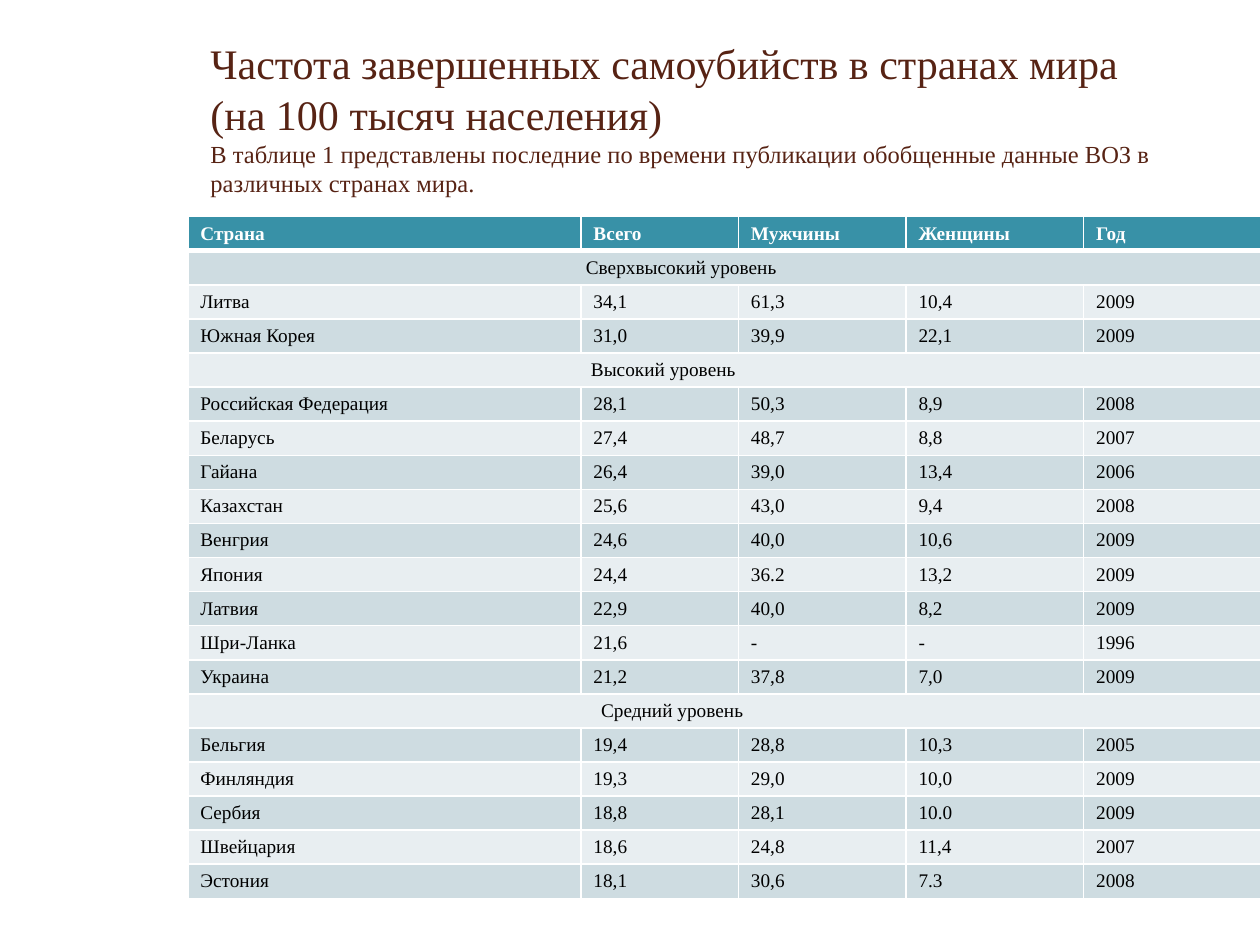
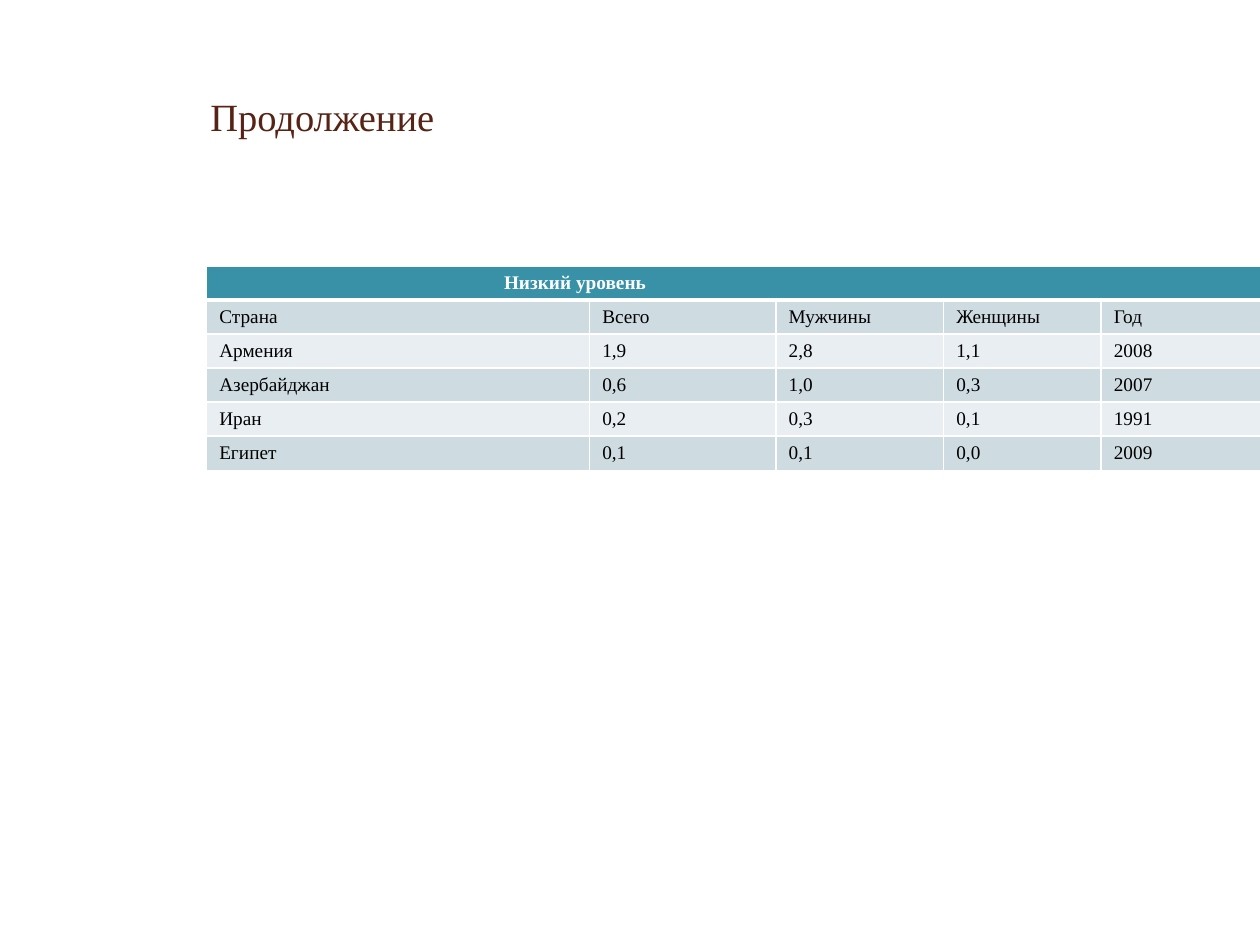
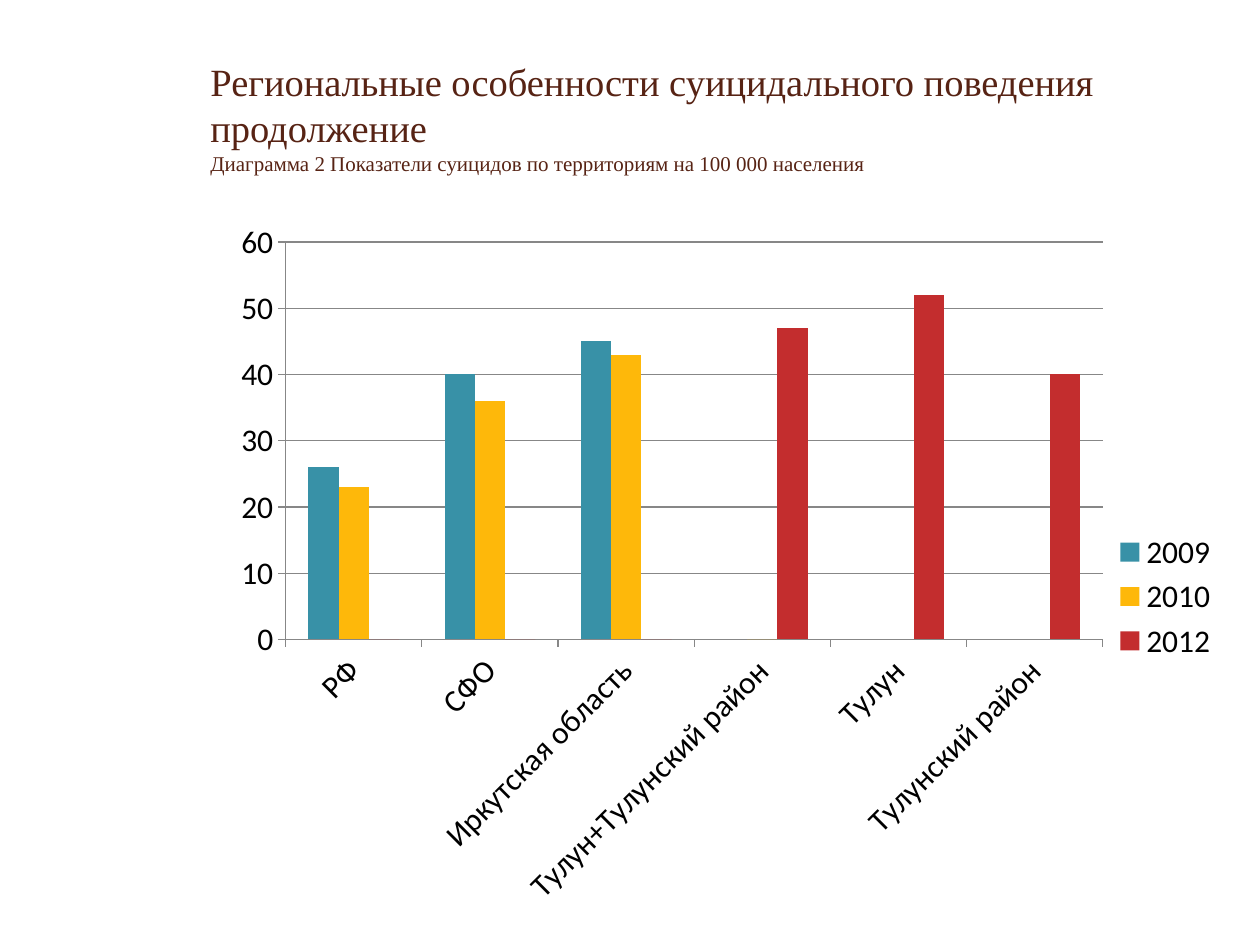
from dataclasses import dataclass

from lxml import etree
from pptx import Presentation
from pptx.chart.data import CategoryChartData
from pptx.dml.color import RGBColor
from pptx.enum.chart import XL_CHART_TYPE, XL_LEGEND_POSITION, XL_TICK_MARK
from pptx.enum.text import MSO_ANCHOR, MSO_AUTO_SIZE, PP_ALIGN
from pptx.oxml.ns import qn
from pptx.util import Emu, Inches, Pt

COLUMNS = XL_CHART_TYPE.COLUMN_CLUSTERED
LEGEND_RIGHT = XL_LEGEND_POSITION.RIGHT
TICK_OUTSIDE = XL_TICK_MARK.OUTSIDE
MIDDLE = MSO_ANCHOR.MIDDLE
NO_AUTOFIT = MSO_AUTO_SIZE.NONE
LEFT = PP_ALIGN.LEFT

# Shared look
SLIDE_WIDTH, SLIDE_HEIGHT = Inches(10), Inches(7.5)
GRID_COLUMNS = 100  # square grid cells across the slide
TITLE_ONLY = 5
TEXT_FONT, CHART_FONT = "Times New Roman", "Calibri"
TITLE_COLOUR, WHITE, BLACK, AXIS_GREY = "572314", "FFFFFF", "000000", "878787"
HEADER_FILL, DARK_BAND, LIGHT_BAND = "3891A7", "CEDCE1", "E8EEF1"
CELL_SIZE, ROW_HEIGHT = 11, 2.7


@dataclass(frozen=True)
class Area:
    """A place on the slide, in grid cells."""
    left: float
    top: float
    width: float
    height: float

    def lengths(self) -> tuple[Emu, Emu, Emu, Emu]:
        return (grid(self.left), grid(self.top),
                grid(self.width), grid(self.height))


@dataclass(frozen=True)
class TitleLine:
    text: str
    size: int


@dataclass(frozen=True)
class Section:
    """A heading that spans a whole table row, indented in grid cells."""
    text: str
    indent: float


@dataclass(frozen=True)
class Series:
    name: str
    values: tuple[int | None, ...]
    colour: str


Row = Section | tuple[str, ...]

TITLE_AREA = Area(15.7, 3, 82, 12.5)
TALL_TITLE_AREA = Area(15.7, 2.3, 82, 14.1)
CHART_AREA = Area(15.7, 15.8, 82, 63.1)
PLOT_SHARES = {"x": 0.085, "y": 0.054, "w": 0.791, "h": 0.5}

# Content
HEADINGS = ("Страна", "Всего", "Мужчины", "Женщины", "Год")
HIGH_RATES: list[Row] = [
    HEADINGS,
    Section("Сверхвысокий уровень", 31.6),
    ("Литва", "34,1", "61,3", "10,4", "2009"),
    ("Южная Корея", "31,0", "39,9", "22,1", "2009"),
    Section("Высокий уровень", 32),
    ("Российская Федерация", "28,1", "50,3", "8,9", "2008"),
    ("Беларусь", "27,4", "48,7", "8,8", "2007"),
    ("Гайана", "26,4", "39,0", "13,4", "2006"),
    ("Казахстан", "25,6", "43,0", "9,4", "2008"),
    ("Венгрия", "24,6", "40,0", "10,6", "2009"),
    ("Япония", "24,4", "36.2", "13,2", "2009"),
    ("Латвия", "22,9", "40,0", "8,2", "2009"),
    ("Шри-Ланка", "21,6", "-", "-", "1996"),
    ("Украина", "21,2", "37,8", "7,0", "2009"),
    Section("Средний уровень", 32.8),
    ("Бельгия", "19,4", "28,8", "10,3", "2005"),
    ("Финляндия", "19,3", "29,0", "10,0", "2009"),
    ("Сербия", "18,8", "28,1", "10.0", "2009"),
    ("Швейцария", "18,6", "24,8", "11,4", "2007"),
    ("Эстония", "18,1", "30,6", "7.3", "2008"),
]
LOW_RATES: list[Row] = [
    Section("Низкий уровень", 23.6),
    HEADINGS,
    ("Армения", "1,9", "2,8", "1,1", "2008"),
    ("Азербайджан", "0,6", "1,0", "0,3", "2007"),
    ("Иран", "0,2", "0,3", "0,1", "1991"),
    ("Египет", "0,1", "0,1", "0,0", "2009"),
]
TERRITORIES = ("РФ", "СФО", "Иркутская область", "Тулун+Тулунский район",
               "Тулун", "Тулунский район")
YEARS = (
    Series("2009", (26, 40, 45, None, None, None), "3891A7"),
    Series("2010", (23, 36, 43, 0, None, None), "FEB80A"),
    Series("2012", (0, 0, 0, 47, 52, 40), "C32D2E"),
)


def grid(cells: float) -> Emu:
    return Emu(round(SLIDE_WIDTH * cells / GRID_COLUMNS))


def colour(value: str) -> RGBColor:
    return RGBColor.from_string(value)


def set_font(font, name: str, size: int, ink: str, bold: bool = False) -> None:
    font.name, font.size, font.bold = name, Pt(size), bold
    font.color.rgb = colour(ink)


def add_page(deck, area: Area, lines: list[TitleLine]):
    """Add a slide whose title has one line break between its lines."""
    page = deck.slides.add_slide(deck.slide_layouts[TITLE_ONLY])
    box = page.shapes.title
    box.left, box.top, box.width, box.height = area.lengths()
    frame = box.text_frame
    frame.word_wrap, frame.auto_size = True, NO_AUTOFIT
    frame.vertical_anchor = MIDDLE
    para = frame.paragraphs[0]
    para.alignment = LEFT
    for index, line in enumerate(lines):
        if index:
            para.add_line_break()
        span = para.add_run()
        span.text = line.text
        set_font(span.font, TEXT_FONT, line.size, TITLE_COLOUR)
    return page


# Tables
def add_borders(cell, bottom: int) -> None:
    properties = cell._tc.get_or_add_tcPr()
    widths = {"a:lnL": 1, "a:lnR": 1, "a:lnT": 1, "a:lnB": bottom}
    for position, (tag, width) in enumerate(widths.items()):
        line = etree.Element(qn(tag), w=str(Pt(width)))
        fill = etree.SubElement(line, qn("a:solidFill"))
        etree.SubElement(fill, qn("a:srgbClr"), val=WHITE)
        properties.insert(position, line)


def fill_cell(cell, text: str, row: int) -> None:
    header = row == 0
    band = DARK_BAND if row % 2 else LIGHT_BAND
    cell.fill.solid()
    cell.fill.fore_color.rgb = colour(HEADER_FILL if header else band)
    add_borders(cell, 3 if header else 1)
    para = cell.text_frame.paragraphs[0]
    para.text = text
    set_font(para.font, TEXT_FONT, CELL_SIZE, WHITE if header else BLACK, header)


def add_rates(page, left: float, top: float, widths: tuple[float, ...],
              rows: list[Row]) -> None:
    area = Area(left, top, sum(widths), ROW_HEIGHT * len(rows))
    table = page.shapes.add_table(len(rows), len(widths), *area.lengths()).table
    for column, width in zip(table.columns, widths):
        column.width = grid(width)
    for index, row in enumerate(rows):
        table.rows[index].height = grid(ROW_HEIGHT)
        section = isinstance(row, Section)
        texts = (row.text,) + ("",) * (len(widths) - 1) if section else row
        for column, text in enumerate(texts):
            fill_cell(table.cell(index, column), text, index)
        if section:
            first = table.cell(index, 0)
            first.merge(table.cell(index, len(widths) - 1))
            first.margin_left = grid(row.indent)


# Chart
def place_plot(chart) -> None:
    area = chart._chartSpace.chart.plotArea
    for old in area.findall(qn("c:layout")):
        area.remove(old)
    layout = etree.Element(qn("c:layout"))
    manual = etree.SubElement(layout, qn("c:manualLayout"))
    settings = {"layoutTarget": "inner", "xMode": "edge", "yMode": "edge"}
    for tag, value in (settings | PLOT_SHARES).items():
        etree.SubElement(manual, qn(f"c:{tag}"), val=str(value))
    area.insert(0, layout)


def add_territory_chart(page) -> None:
    data = CategoryChartData()
    data.categories = TERRITORIES
    for year in YEARS:
        data.add_series(year.name, year.values)
    chart = page.shapes.add_chart(COLUMNS, *CHART_AREA.lengths(), data).chart
    chart.has_title = False
    set_font(chart.font, CHART_FONT, 18, BLACK)
    chart.has_legend = True
    chart.legend.position = LEGEND_RIGHT
    chart.legend.include_in_layout = False

    plot = chart.plots[0]
    plot.gap_width, plot.overlap, plot.vary_by_categories = 150, 0, False
    for series, year in zip(plot.series, YEARS):
        series.format.fill.solid()
        series.format.fill.fore_color.rgb = colour(year.colour)

    scale = chart.value_axis
    scale.minimum_scale, scale.maximum_scale, scale.major_unit = 0, 60, 10
    scale.has_major_gridlines = True
    for axis in (chart.category_axis, scale):
        axis.major_tick_mark = TICK_OUTSIDE
        set_font(axis.tick_labels.font, CHART_FONT, 18, BLACK)
    for lined in (chart.category_axis, scale, scale.major_gridlines):
        lined.format.line.color.rgb = colour(AXIS_GREY)
        lined.format.line.width = Pt(0.75)
    label_body = chart.category_axis._element.find(
        f"{qn('c:txPr')}/{qn('a:bodyPr')}")
    label_body.set("rot", str(-45 * 60000))
    place_plot(chart)


def main() -> None:
    deck = Presentation()
    deck.slide_width, deck.slide_height = SLIDE_WIDTH, SLIDE_HEIGHT

    page = add_page(deck, TALL_TITLE_AREA, [
        TitleLine("Частота завершенных самоубийств в странах мира", 24),
        TitleLine("(на 100 тысяч населения)", 24),
        TitleLine("В таблице 1 представлены последние по времени публикации "
                  "обобщенные данные ВОЗ в различных странах мира.", 14),
    ])
    add_rates(page, 14.9, 17.2, (31.2, 12.5, 13.3, 14.1, 11), HIGH_RATES)

    page = add_page(deck, TITLE_AREA, [TitleLine("Продолжение", 22)])
    add_rates(page, 16.4, 21.1, (30.4, 14.8, 13.3, 12.5, 11), LOW_RATES)

    page = add_page(deck, TITLE_AREA, [
        TitleLine("Региональные особенности суицидального поведения", 22),
        TitleLine("продолжение", 22),
        TitleLine("Диаграмма 2 Показатели суицидов по территориям "
                  "на 100 000 населения", 12),
    ])
    add_territory_chart(page)

    deck.save("out.pptx")


if __name__ == "__main__":
    main()
